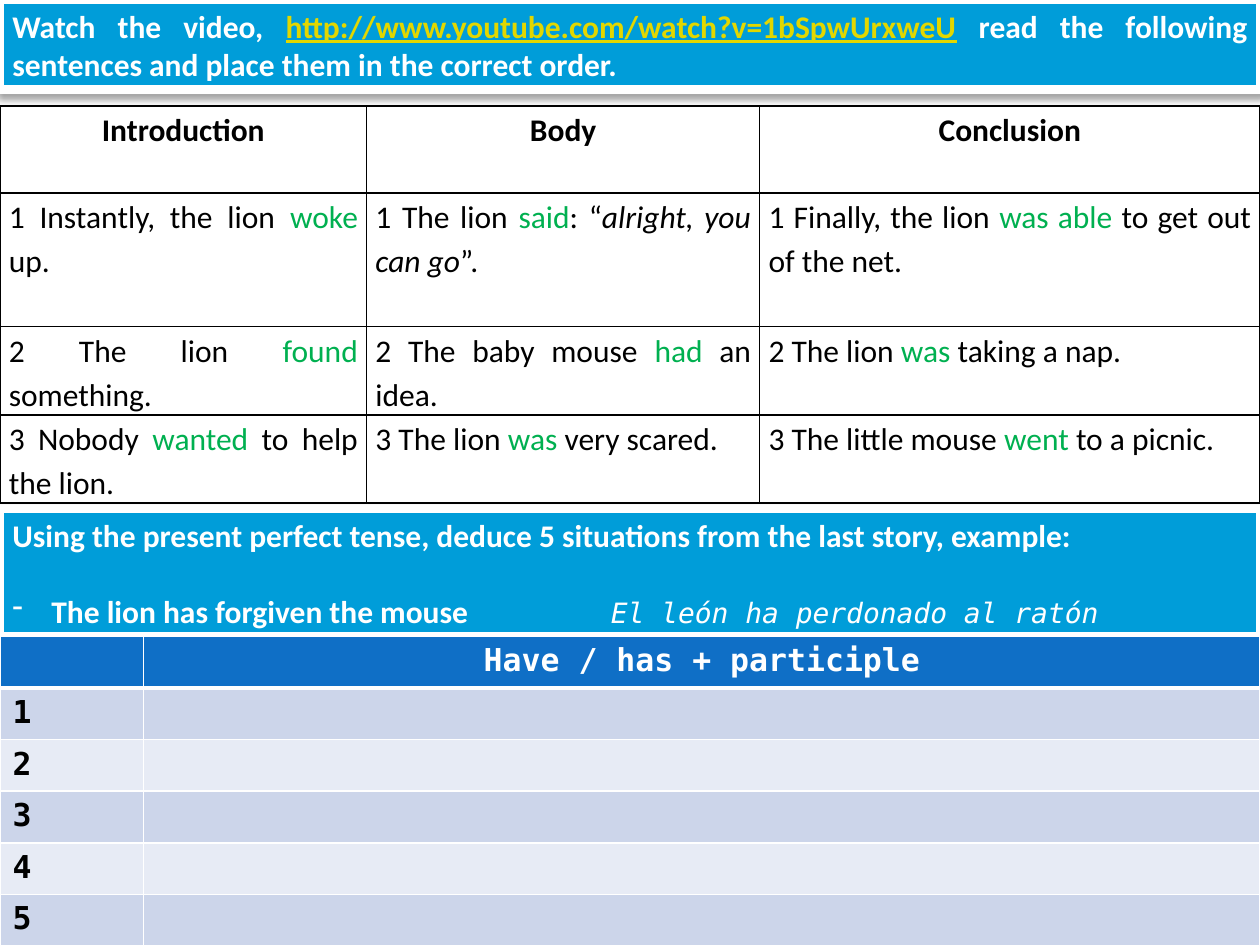
from pptx import Presentation
from pptx.dml.color import RGBColor
from pptx.enum.shapes import MSO_SHAPE
from pptx.enum.text import MSO_ANCHOR, PP_ALIGN
from pptx.oxml import parse_xml
from pptx.oxml.ns import nsdecls
from pptx.util import Inches, Pt

# Content
HUE = {"sky": "009DD9", "blue": "0F6FC6", "dark": "CCD5EA", "pale": "E7EBF5",
       "white": "FFFFFF", "black": "000000", "green": "00B050", "link": "E2D700"}
SANS, MONO = "Calibri", "DejaVu Sans Mono"
VERB = {"hue": "green"}
TASK = ["Watch the video, ",
        ("http://www.youtube.com/watch?v=1bSpwUrxweU", {"hue": "link", "line": True}),
        " read the following sentences and place them in the correct order."]
GOAL = ["Using the present perfect tense, deduce 5 situations from the last story, example:"]
MODEL = ["The lion has forgiven the mouse\t",
         ("El león ha perdonado al ratón",
          {"face": MONO, "size": 16, "bold": False, "slant": True})]
HEADS = ["Introduction", "Body", "Conclusion"]
STORY = [
    [["1 Instantly, the lion ", ("woke", VERB), " up."],
     ["1 The lion ", ("said", VERB), ": “", ("alright, you can go", {"slant": True}), "”."],
     ["1 Finally, the lion ", ("was able ", VERB), "to get out of the net."]],
    [["2 The lion ", ("found ", VERB), "something."],
     ["2 The baby mouse ", ("had ", VERB), "an idea."],
     ["2 The lion ", ("was", VERB), " taking a nap."]],
    [["3 Nobody ", ("wanted", VERB), " to help the lion."],
     ["3 The lion ", ("was", VERB), " very scared."],
     ["3 The little mouse ", ("went ", VERB), "to a picnic."]],
]
DRILL = "Have / has + participle"
COUNT = 5

# Layout in inches
WIDE, HIGH = 10, 7.5
STORY_COLS, STORY_ROWS = [2.91, 3.12, 3.97], [0.69, 1.06, 0.7, 0.7]
DRILL_COLS, DRILL_ROWS = [1.14, 8.86], [0.41] * (COUNT + 1)


def rgb(name):
    return RGBColor.from_string(HUE[name])


def write(para, runs, align=PP_ALIGN.LEFT, space=None, **base):
    """Fill a paragraph with runs: plain strings or (text, format) pairs."""
    para.alignment = align
    if space:
        para.line_spacing = space
    for part in runs:
        text, extra = (part, {}) if isinstance(part, str) else part
        look = {"face": SANS, "size": 18, "hue": "black", "bold": False,
                "slant": False, "line": False, **base, **extra}
        run = para.add_run()
        run.text = text
        font = run.font
        font.name, font.size = look["face"], Pt(look["size"])
        font.bold, font.italic, font.underline = look["bold"], look["slant"], look["line"]
        font.color.rgb = rgb(look["hue"])


def banner(top, high):
    """Blue band with a white edge and a soft shadow; returns its text frame."""
    box = slide.shapes.add_shape(MSO_SHAPE.RECTANGLE, 0, Inches(top),
                                 Inches(WIDE), Inches(high))
    box.shadow.inherit = False
    box.fill.solid()
    box.fill.fore_color.rgb = rgb("sky")
    box.line.color.rgb = rgb("white")
    box.line.width = Pt(5)
    glow = box._element.spPr.find("{*}effectLst")
    glow.append(parse_xml(
        f'<a:outerShdw {nsdecls("a")} blurRad="{Pt(4)}" dist="{Pt(3)}" dir="5400000" '
        f'rotWithShape="0"><a:srgbClr val="{HUE["black"]}"><a:alpha val="35000"/>'
        '</a:srgbClr></a:outerShdw>'))
    frame = box.text_frame
    frame.word_wrap = True
    frame.vertical_anchor = MSO_ANCHOR.MIDDLE
    return frame


def grid(top, cols, rows):
    table = slide.shapes.add_table(len(rows), len(cols), 0, Inches(top),
                                   Inches(sum(cols)), Inches(sum(rows))).table
    table.first_row = table.horz_banding = False
    for col, size in zip(table.columns, cols):
        col.width = Inches(size)
    for row, size in zip(table.rows, rows):
        row.height = Inches(size)
    return table


def dress(cell, edge, fill=None, base=1):
    """Give a cell its four borders and its fill."""
    props = cell._tc.get_or_add_tcPr()
    for side, wide in zip("LRTB", (1, 1, 1, base)):
        props.append(parse_xml(
            f'<a:ln{side} {nsdecls("a")} w="{Pt(wide)}"><a:solidFill>'
            f'<a:srgbClr val="{HUE[edge]}"/></a:solidFill></a:ln{side}>'))
    if fill:
        cell.fill.solid()
        cell.fill.fore_color.rgb = rgb(fill)
    else:
        cell.fill.background()


deck = Presentation()
deck.slide_width, deck.slide_height = Inches(WIDE), Inches(HIGH)
slide = deck.slides.add_slide(deck.slide_layouts[6])

# First task
JUST, MID = PP_ALIGN.JUSTIFY, PP_ALIGN.CENTER
title = {"align": JUST, "hue": "white", "bold": True}
write(banner(0, 0.71).paragraphs[0], TASK, **title)

# Story table
table = grid(0.84, STORY_COLS, STORY_ROWS)
for r, line in enumerate([[[head] for head in HEADS]] + STORY):
    for c, runs in enumerate(line):
        cell = table.cell(r, c)
        dress(cell, "black")
        cell.margin_left = cell.margin_right = Inches(0.07)
        cell.margin_top = cell.margin_bottom = 0
        write(cell.text_frame.paragraphs[0], runs, space=1.15,
              align=JUST if r else MID, bold=not r)

# Second task, with a dashed example and its translation at a tab stop
frame = banner(4.04, 1.01)
write(frame.paragraphs[0], GOAL, **title)
para = frame.add_paragraph()
props = para._p.get_or_add_pPr()
props.set("marL", str(Inches(0.31)))
props.set("indent", str(-Inches(0.31)))
props.append(parse_xml(f'<a:buChar {nsdecls("a")} char="-"/>'))
props.append(parse_xml(f'<a:tabLst {nsdecls("a")}><a:tab pos="{Inches(4.75)}" '
                       'algn="l"/></a:tabLst>'))
para.space_before = Pt(21.6)
write(para, MODEL, **title)

# Answer table
table = grid(5.05, DRILL_COLS, DRILL_ROWS)
mono = {"face": MONO, "bold": True}
for r in range(COUNT + 1):
    fill = ("dark" if r % 2 else "pale") if r else "blue"
    for c in range(2):
        dress(table.cell(r, c), "white", fill, base=1 if r else 3)
    if r:
        write(table.cell(r, 0).text_frame.paragraphs[0], [str(r)], **mono)
write(table.cell(0, 1).text_frame.paragraphs[0], [DRILL], align=MID, hue="white", **mono)

deck.save("out.pptx")
